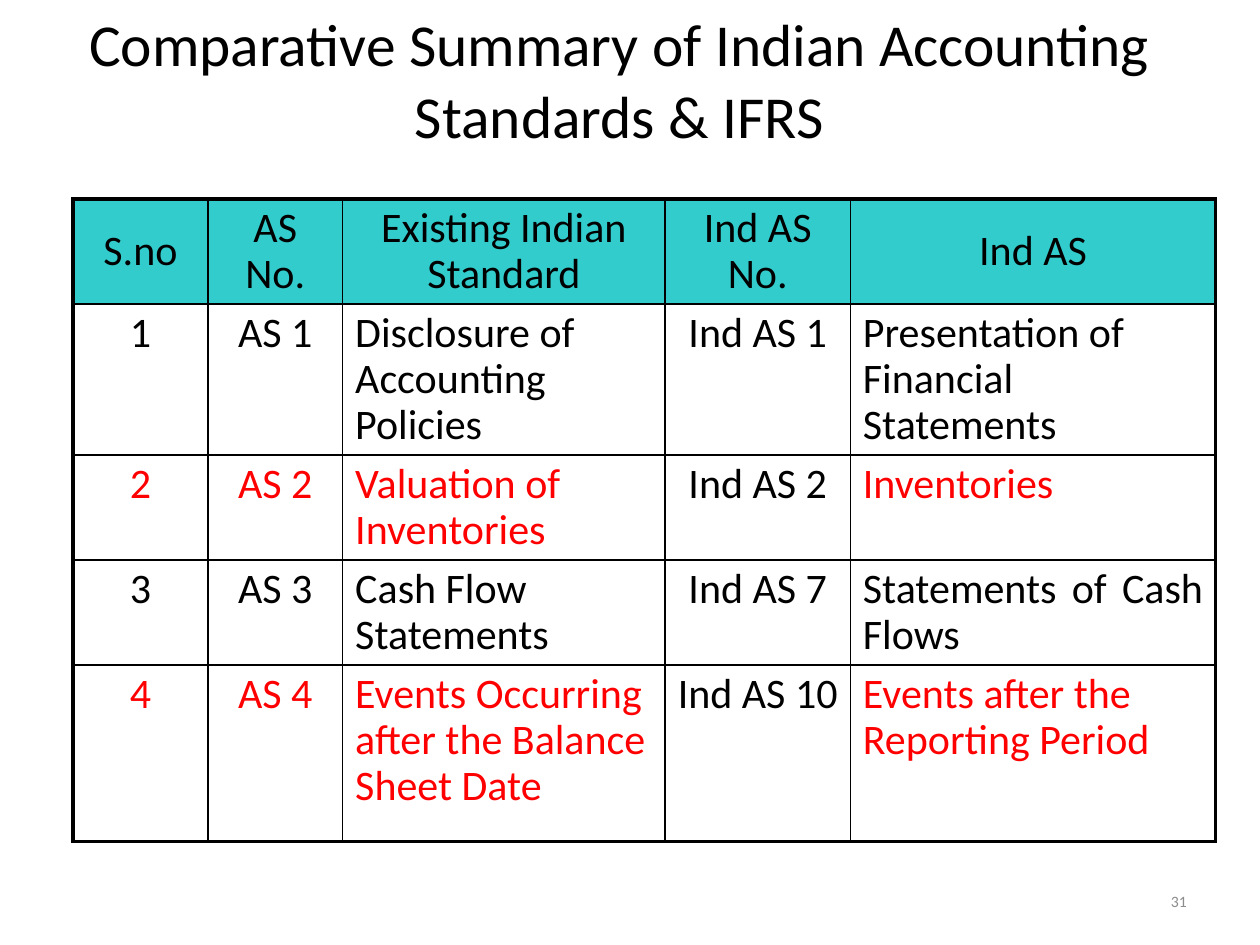
"""Build the slide comparing Indian Accounting Standards with IFRS."""
from dataclasses import dataclass

from lxml import etree
from pptx import Presentation
from pptx.dml.color import RGBColor
from pptx.enum.text import MSO_ANCHOR, MSO_AUTO_SIZE, PP_ALIGN
from pptx.oxml.ns import qn
from pptx.util import Inches, Pt

LEFT, CENTER, RIGHT, JUSTIFY = PP_ALIGN.LEFT, PP_ALIGN.CENTER, PP_ALIGN.RIGHT, PP_ALIGN.JUSTIFY
TOP, MIDDLE = MSO_ANCHOR.TOP, MSO_ANCHOR.MIDDLE
NO_AUTOFIT = MSO_AUTO_SIZE.NONE

COL_WIDTHS = [1.07, 1.07, 2.56, 1.47, 2.9]
ROW_HEIGHTS = [0.82, 1.18, 0.82, 0.82, 1.4]
COL_ALIGNS = [CENTER, CENTER, LEFT, CENTER, LEFT]
IND_AS_NO_COL = 3
HIGHLIGHT_ROWS = {2, 4}
JUSTIFIED_CELLS = {(2, 4), (3, 4)}
ROWS = [
    ["S.no", "AS No.", "Existing Indian Standard", "Ind AS No.", "Ind AS"],
    ["1", "AS 1", "Disclosure of Accounting Policies", "Ind AS 1",
     "Presentation of Financial Statements"],
    ["2", "AS 2", "Valuation of Inventories", "Ind AS 2", "Inventories"],
    ["3", "AS 3", "Cash Flow Statements", "Ind AS 7", "Statements of Cash Flows"],
    ["4", "AS 4", "Events Occurring after the Balance Sheet Date", "Ind AS 10",
     "Events after the Reporting Period"],
]


@dataclass(frozen=True)
class Theme:
    font: str = "Calibri"
    text: str = "000000"
    highlight: str = "FF0000"
    header: str = "33CCCC"
    muted: str = "8C8C8C"
    title_size: float = 34
    table_size: float = 24
    number_size: float = 9
    outer_line: float = 2.25
    inner_line: float = 1


class SlideBuilder:
    def __init__(self, slide, theme):
        self.slide = slide
        self.theme = theme

    def set_text(self, tf, text, size, color, align):
        tf.word_wrap = True
        p = tf.paragraphs[0]
        p.text = text
        p.alignment = align
        p.font.name = self.theme.font
        p.font.size = Pt(size)
        p.font.color.rgb = RGBColor.from_string(color)
        return p

    def frame(self, sp, text, size, color, align):
        tf = sp.text_frame
        tf.auto_size = NO_AUTOFIT
        tf.vertical_anchor = MIDDLE
        tf.margin_left = tf.margin_right = Inches(0.08)
        tf.margin_top = tf.margin_bottom = Inches(0.04)
        self.set_text(tf, text, size, color, align)

    def title(self, text, left, top, width, height):
        sp = self.slide.shapes.title
        sp.left, sp.top = Inches(left), Inches(top)
        sp.width, sp.height = Inches(width), Inches(height)
        self.frame(sp, text, self.theme.title_size, self.theme.text, CENTER)

    def slide_number(self, text, left, top, width, height):
        sp = self.slide.shapes.add_textbox(
            Inches(left), Inches(top), Inches(width), Inches(height))
        self.frame(sp, text, self.theme.number_size, self.theme.muted, RIGHT)

    def borders(self, cell, outer_sides):
        tc_pr = cell._tc.get_or_add_tcPr()
        for side in "LRTB":
            width = self.theme.outer_line if side in outer_sides else self.theme.inner_line
            ln = etree.SubElement(tc_pr, qn(f"a:ln{side}"), w=str(Pt(width)))
            fill = etree.SubElement(ln, qn("a:solidFill"))
            etree.SubElement(fill, qn("a:srgbClr"), val=self.theme.text)

    def cell(self, cell, text, color, align, is_header, outer_sides):
        cell.margin_left = cell.margin_right = Inches(0.1)
        cell.margin_top = cell.margin_bottom = Inches(0.05)
        cell.vertical_anchor = MIDDLE if is_header else TOP
        p = self.set_text(cell.text_frame, text, self.theme.table_size, color, align)
        p.line_spacing = 0.9
        self.borders(cell, outer_sides)
        if is_header:
            cell.fill.solid()
            cell.fill.fore_color.rgb = RGBColor.from_string(self.theme.header)
        else:
            cell.fill.background()

    def table(self, rows, left, top):
        last_row, last_col = len(rows) - 1, len(COL_WIDTHS) - 1
        table = self.slide.shapes.add_table(
            len(rows), len(COL_WIDTHS), Inches(left), Inches(top),
            Inches(sum(COL_WIDTHS)), Inches(sum(ROW_HEIGHTS))).table
        table.first_row = table.horz_banding = False
        for column, width in zip(table.columns, COL_WIDTHS):
            column.width = Inches(width)
        for row, height in zip(table.rows, ROW_HEIGHTS):
            row.height = Inches(height)
        for r, texts in enumerate(rows):
            for c, text in enumerate(texts):
                highlighted = r in HIGHLIGHT_ROWS and c != IND_AS_NO_COL
                color = self.theme.highlight if highlighted else self.theme.text
                align = CENTER if r == 0 else COL_ALIGNS[c]
                if (r, c) in JUSTIFIED_CELLS:
                    align = JUSTIFY
                edges = {"L": c == 0, "R": c == last_col, "T": r == 0, "B": r == last_row}
                outer_sides = [side for side, is_outer in edges.items() if is_outer]
                self.cell(table.cell(r, c), text, color, align, r == 0, outer_sides)


def main():
    prs = Presentation()
    prs.slide_width, prs.slide_height = Inches(10), Inches(7.5)
    s = SlideBuilder(prs.slides.add_slide(prs.slide_layouts[5]), Theme())
    s.title("Comparative Summary of Indian Accounting Standards & IFRS", 0.25, 0, 9.33, 1.25)
    s.table(ROWS, 0.58, 1.58)
    s.slide_number("31", 7.17, 6.95, 2.33, 0.4)
    prs.save("out.pptx")


if __name__ == "__main__":
    main()
